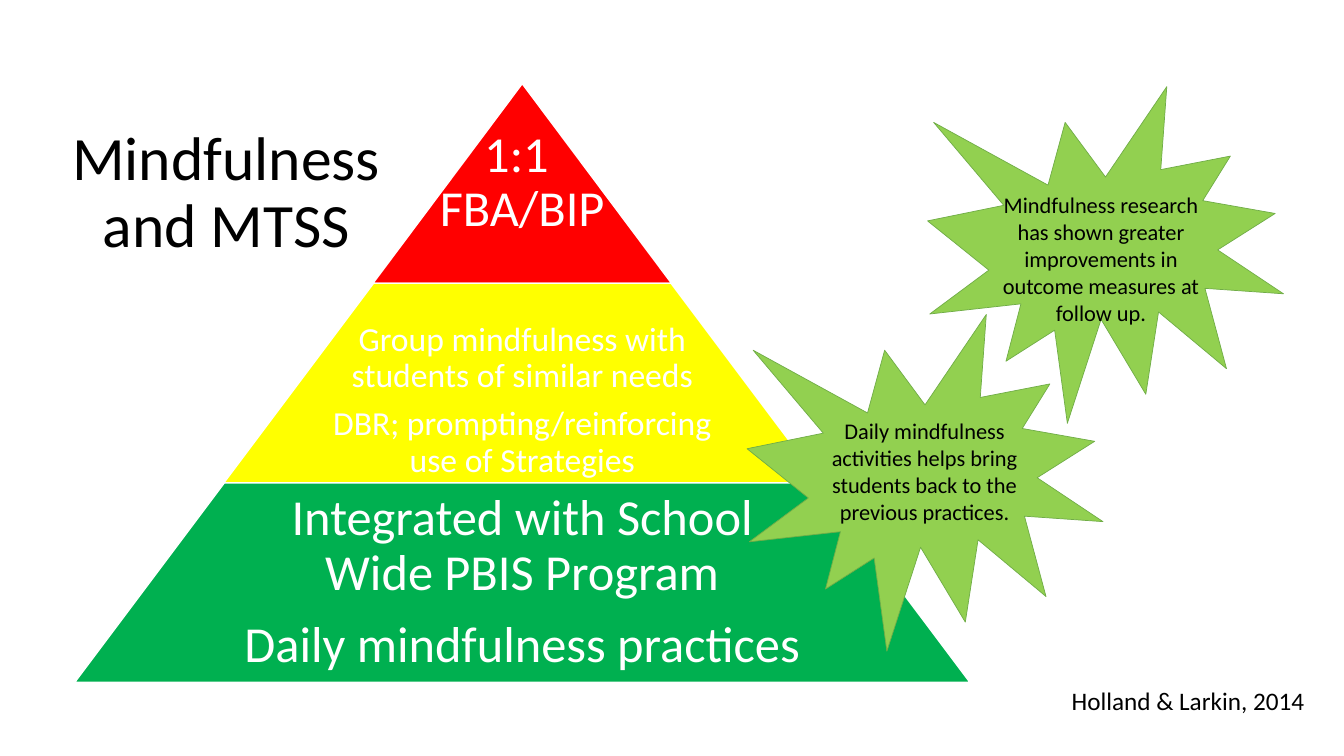
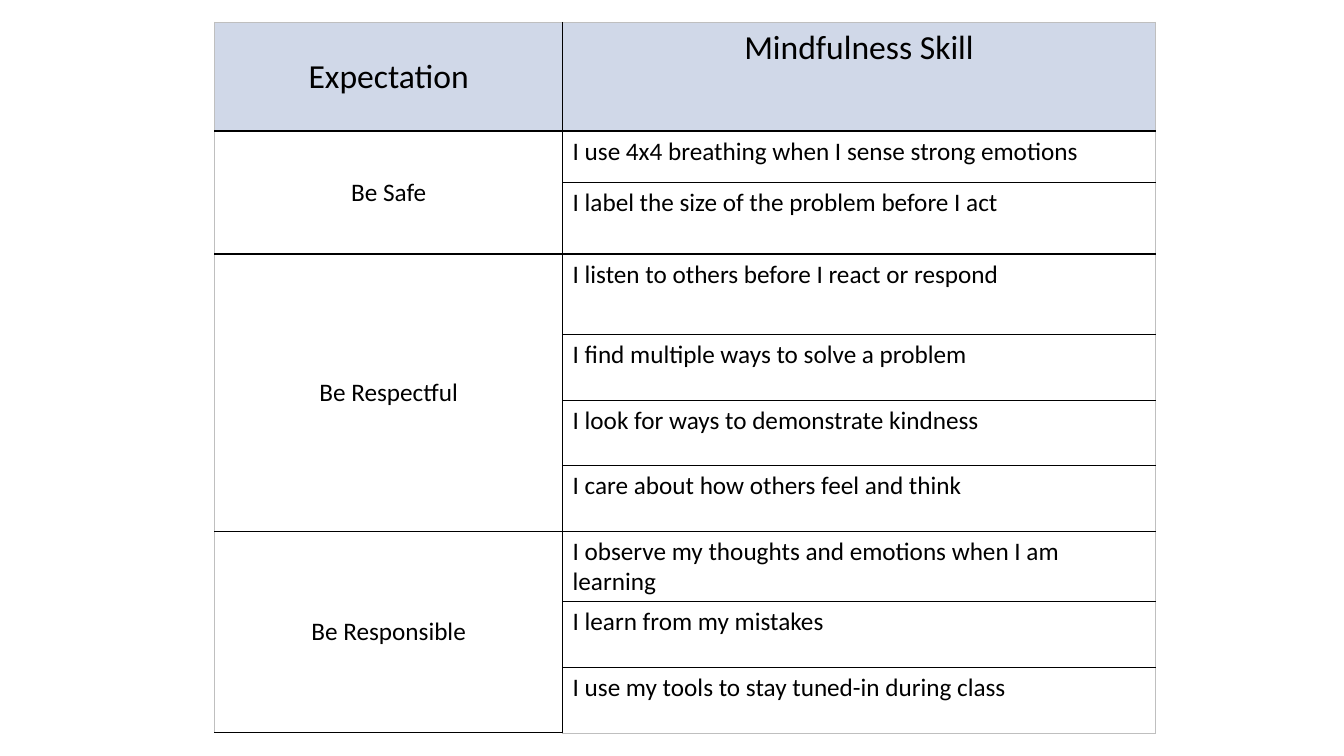
"""Build two slides on mindfulness: a tiered pyramid and a skills table."""
from lxml.etree import SubElement as Sub
from pptx import Presentation
from pptx.dml.color import RGBColor
from pptx.enum.shapes import MSO_SHAPE as Kind
from pptx.enum.text import MSO_ANCHOR as Anchor, MSO_AUTO_SIZE as Fit, PP_ALIGN as Align
from pptx.oxml.ns import qn
from pptx.util import Inches, Pt

hue = RGBColor.from_string
BLACK, WHITE, GREY, BLUE = "000000", "FFFFFF", "BFBFBF", "D0D8E8"
LIME, LEAF = "92D050", "70AD47"
FONT = "Calibri"


def write(frame, paras, size, color=BLACK, align=Align.CENTER, lead=1.0, after=0):
    """Fill a text frame; a newline inside a paragraph is a line break."""
    frame.word_wrap = True
    for i, text in enumerate(paras):
        para = frame.add_paragraph() if i else frame.paragraphs[0]
        para.alignment = align
        para.line_spacing = lead
        para.space_after = Pt(after)
        for j, line in enumerate(text.split("\n")):
            if j:
                para.add_line_break()
            run = para.add_run()
            run.text = line
            run.font.name = FONT
            run.font.size = Pt(size)
            run.font.color.rgb = hue(color)


def draw(slide, kind, box, fill, line, width):
    """Add a filled, outlined shape without a shadow."""
    shape = slide.shapes.add_shape(kind, *map(Inches, box))
    shape.shadow.inherit = False
    shape.fill.solid()
    shape.fill.fore_color.rgb = hue(fill)
    shape.line.color.rgb = hue(line)
    shape.line.width = Pt(width)
    return shape


prs = Presentation()
prs.slide_width, prs.slide_height = Inches(13.33), Inches(7.5)

slide = prs.slides.add_slide(prs.slide_layouts[5])
title = slide.shapes.title
title.left, title.top, title.width, title.height = map(Inches, (0.56, 1.2, 3.37, 1.45))
title.text_frame.auto_size = Fit.NONE
title.text_frame.vertical_anchor = Anchor.MIDDLE
write(title.text_frame, ["Mindfulness and MTSS"], 44, lead=0.9)

MID, TOP, HIGH, STEP = 5.18, 0.83, 1.98, 2.96
tiers = [
    ("FF0000", 2.96, 36, 0.05, 0.05, Anchor.MIDDLE, ["1:1 \nFBA/BIP"]),
    ("FFFF00", 3.85, 24, 0.03, 0.39, Anchor.TOP,
     ["Group mindfulness with students of similar needs",
      "DBR; prompting/reinforcing use of Strategies"]),
    ("00B050", 5.78, 36, 0.05, 0.05, Anchor.MIDDLE,
     ["Integrated with School Wide PBIS Program", "Daily mindfulness practices"]),
]
for i, (fill, wide, size, pad, head, anchor, paras) in enumerate(tiers):
    span, y = STEP * (i + 1), TOP + HIGH * i
    tier = draw(slide, Kind.TRAPEZOID, (MID - span / 2, y, span, HIGH), fill, WHITE, 1)
    tier.adjustments[0] = 0.75
    box = slide.shapes.add_textbox(*map(Inches, (MID - wide / 2, y, wide, HIGH)))
    frame = box.text_frame
    frame.margin_left = frame.margin_right = frame.margin_bottom = Inches(pad)
    frame.margin_top = Inches(head)
    frame.vertical_anchor = anchor
    write(frame, paras, size, WHITE, lead=0.9, after=size * 0.35)

bursts = [
    (7.41, 3.12, (8.06, 4.09, 2.22, 1.18),
     "Daily mindfulness activities helps bring students back to the previous practices."),
    (9.2, 0.86, (9.81, 1.85, 2.22, 1.45),
     "Mindfulness research has shown greater improvements in outcome measures "
     "at follow up."),
]
for x, y, area, text in bursts:
    draw(slide, Kind.EXPLOSION1, (x, y, 3.53, 3.34), LIME, LEAF, 0.5)
    box = slide.shapes.add_textbox(*map(Inches, area))
    write(box.text_frame, [text], 16)

cite = slide.shapes.add_textbox(*map(Inches, (10.53, 6.75, 2.52, 0.4)))
write(cite.text_frame, ["Holland & Larkin, 2014"], 18, align=Align.LEFT)

slide = prs.slides.add_slide(prs.slide_layouts[6])
groups = [
    ("Be Safe", ["I use 4x4 breathing when I sense strong emotions",
                 "I label the size of the problem before I act"]),
    ("Be Respectful", ["I listen to others before I react or respond",
                       "I find multiple ways to solve a problem",
                       "I look for ways to demonstrate kindness",
                       "I care about how others feel and think"]),
    ("Be Responsible", ["I observe my thoughts and emotions when I am learning",
                        "I learn from my mistakes",
                        "I use my tools to stay tuned-in during class"]),
]
cols = [3.45, 5.88]
rows = [1.08, 0.51, 0.71, 0.8] + [0.65] * 6
grid = slide.shapes.add_table(
    len(rows), len(cols), *map(Inches, (2.13, 0.22, sum(cols), sum(rows)))).table
grid.first_row = grid.horz_banding = False
for col, wide in zip(grid.columns, cols):
    col.width = Inches(wide)
for row, high in zip(grid.rows, rows):
    row.height = Inches(high)

for r in range(len(rows)):
    for c in range(len(cols)):
        cell = grid.cell(r, c)
        props = cell._tc.get_or_add_tcPr()
        edges = {"lnL": c == 0, "lnR": c == len(cols) - 1,
                 "lnT": r == 0, "lnB": r == len(rows) - 1}
        for tag, outer in edges.items():
            edge = Sub(props, qn("a:" + tag), w=str(Pt(0.5 if outer else 1)))
            Sub(Sub(edge, qn("a:solidFill")), qn("a:srgbClr"), val=GREY if outer else BLACK)
        if r:
            cell.fill.background()
        else:
            cell.fill.solid()
            cell.fill.fore_color.rgb = hue(BLUE)

for c, text in enumerate(["Expectation", "Mindfulness Skill"]):
    write(grid.cell(0, c).text_frame, [text], 24)
grid.cell(0, 0).vertical_anchor = Anchor.MIDDLE

r = 1
for name, skills in groups:
    cell = grid.cell(r, 0)
    cell.merge(grid.cell(r + len(skills) - 1, 0))
    cell.vertical_anchor = Anchor.MIDDLE
    write(cell.text_frame, [name], 18)
    for skill in skills:
        write(grid.cell(r, 1).text_frame, [skill], 18, align=Align.LEFT)
        r += 1

prs.save("out.pptx")
